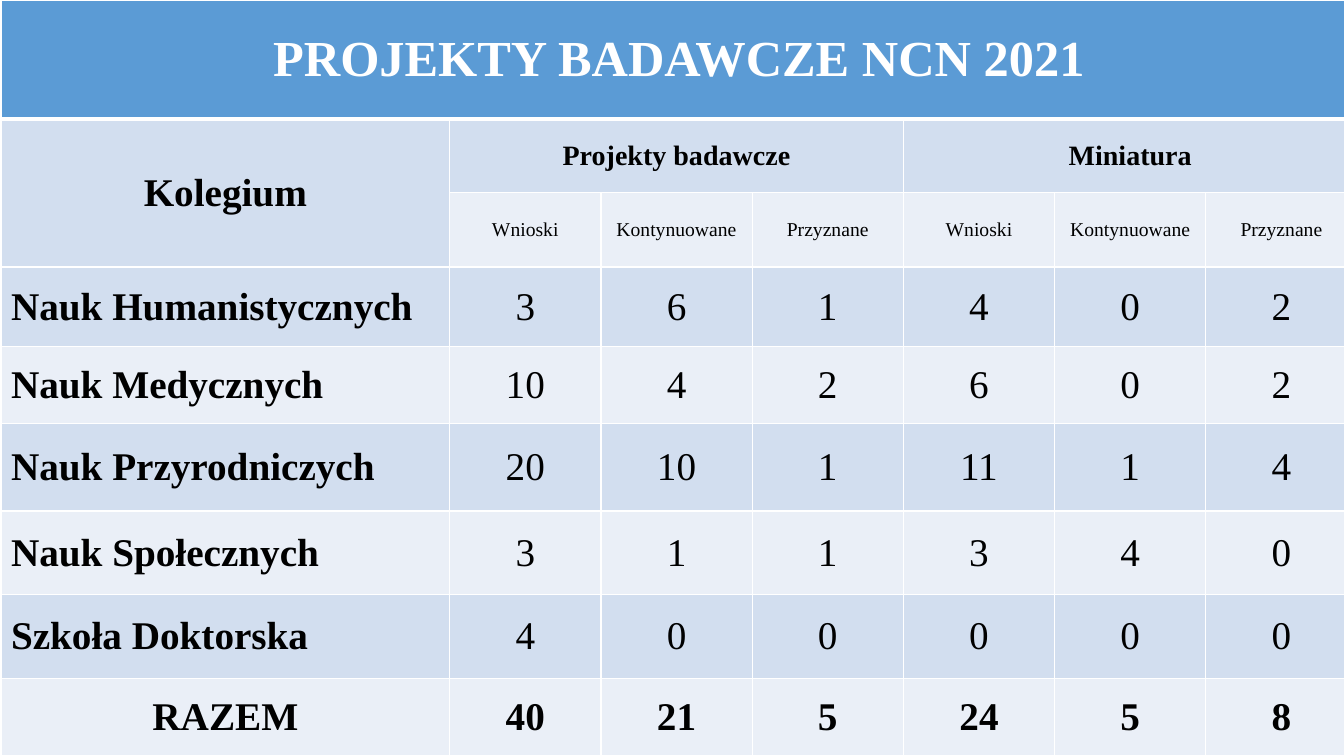
from dataclasses import dataclass

from lxml import etree
from pptx import Presentation
from pptx.dml.color import RGBColor
from pptx.enum import text
from pptx.oxml import ns
from pptx.util import Inches, Pt


@dataclass(frozen=True)
class Theme:
    font: str = "Times New Roman"
    header: str = "5B9BD5"
    dark_band: str = "D2DEEF"
    light_band: str = "EAEFF7"
    white: str = "FFFFFF"
    black: str = "000000"
    title_size: int = 36
    body_size: int = 28
    group_size: int = 20
    label_size: int = 14


theme = Theme()


def add_border(cell, side, width):
    line = etree.SubElement(cell._tc.get_or_add_tcPr(), ns.qn(f"a:ln{side}"), w=str(Pt(width)))
    fill = etree.SubElement(line, ns.qn("a:solidFill"))
    etree.SubElement(fill, ns.qn("a:srgbClr"), val=theme.white)


def write_cell(cell, content, size, bold=False, color=theme.black, align=text.PP_ALIGN.CENTER):
    cell.text = content
    cell.vertical_anchor = text.MSO_ANCHOR.MIDDLE
    paragraph = cell.text_frame.paragraphs[0]
    paragraph.alignment = align
    paragraph.font.name = theme.font
    paragraph.font.size = Pt(size)
    paragraph.font.bold = bold
    paragraph.font.color.rgb = RGBColor.from_string(color)


# Content
groups = ["Projekty badawcze", "Miniatura"]
measures = ["Wnioski", "Kontynuowane", "Przyznane"]
colleges = [
    ("Nauk Humanistycznych", [3, 6, 1, 4, 0, 2]),
    ("Nauk Medycznych", [10, 4, 2, 6, 0, 2]),
    ("Nauk Przyrodniczych", [20, 10, 1, 11, 1, 4]),
    ("Nauk Społecznych", [3, 1, 1, 3, 4, 0]),
    ("Szkoła Doktorska", [4, 0, 0, 0, 0, 0]),
    ("RAZEM", [40, 21, 5, 24, 5, 8]),
]
column_widths = [4.45] + [1.5] * 6
row_heights = [1.18, 0.73, 0.74, 0.79, 0.76, 0.87, 0.83, 0.83, 0.77]

# Slide
deck = Presentation()
deck.slide_width, deck.slide_height = Inches(13.33), Inches(7.5)
slide = deck.slides.add_slide(deck.slide_layouts[6])

# Table grid
projects = slide.shapes.add_table(
    len(row_heights), len(column_widths), Inches(0.01), Inches(0),
    Inches(sum(column_widths)), Inches(sum(row_heights))).table
for column, width in zip(projects.columns, column_widths):
    column.width = Inches(width)
for row, height in zip(projects.rows, row_heights):
    row.height = Inches(height)

# Borders and banded fills, with a heavy line below the title row
for index, row in enumerate(projects.rows):
    band = theme.header if index == 0 else theme.dark_band if index % 2 else theme.light_band
    for cell in row.cells:
        for side in "LRTB":
            heavy = (index, side) in [(0, "B"), (1, "T")]
            add_border(cell, side, 3 if heavy else 1)
        cell.fill.solid()
        cell.fill.fore_color.rgb = RGBColor.from_string(band)

# Title and column headings
projects.cell(0, 0).merge(projects.cell(0, 6))
write_cell(projects.cell(0, 0), "PROJEKTY BADAWCZE NCN 2021", theme.title_size, True, theme.white)
projects.cell(1, 0).merge(projects.cell(2, 0))
write_cell(projects.cell(1, 0), "Kolegium", theme.body_size, True)
for group_index, group in enumerate(groups):
    first = 1 + group_index * len(measures)
    projects.cell(1, first).merge(projects.cell(1, first + len(measures) - 1))
    write_cell(projects.cell(1, first), group, theme.group_size, True)
    for column, measure in enumerate(measures, first):
        write_cell(projects.cell(2, column), measure, theme.label_size)

# Colleges and totals
for row, (college, counts) in enumerate(colleges, 3):
    is_total = college == "RAZEM"
    name_align = text.PP_ALIGN.CENTER if is_total else text.PP_ALIGN.LEFT
    write_cell(projects.cell(row, 0), college, theme.body_size, True, align=name_align)
    for column, count in enumerate(counts, 1):
        write_cell(projects.cell(row, column), str(count), theme.body_size, is_total)

deck.save("out.pptx")
